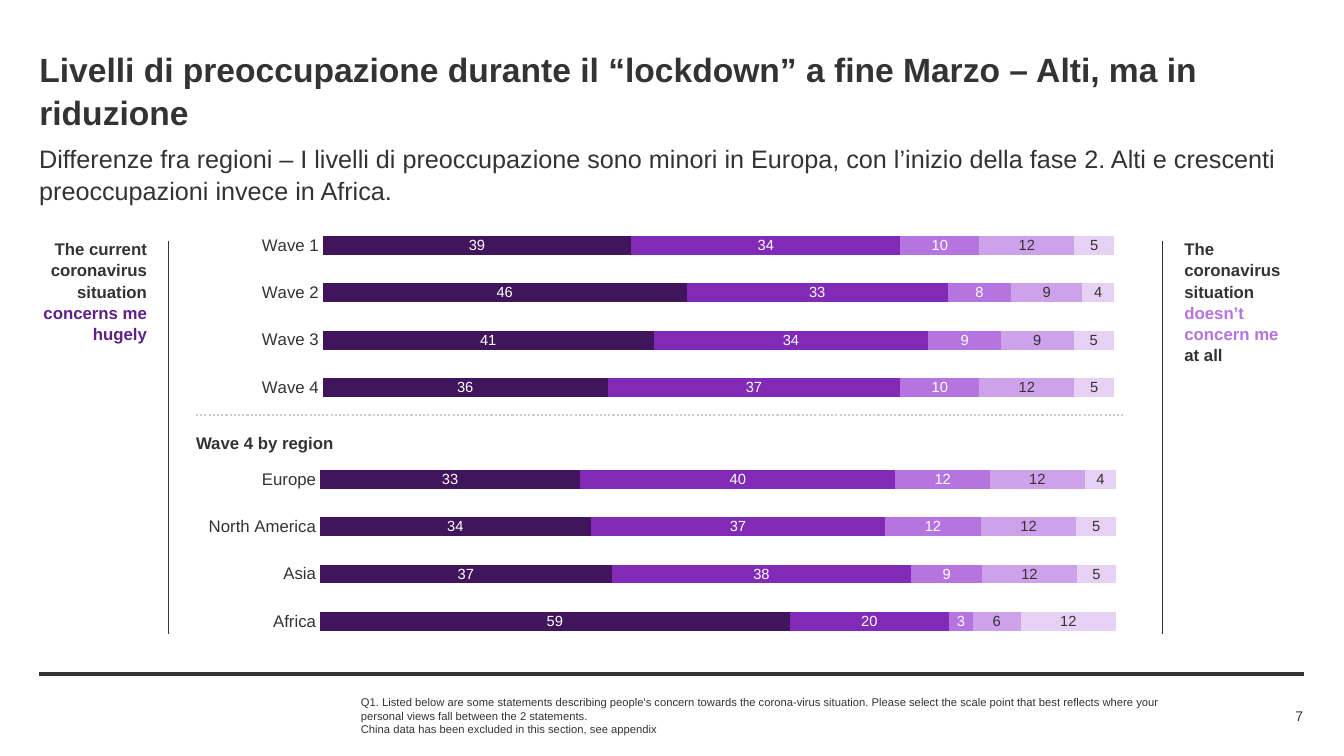
from lxml import etree
from pptx import Presentation
from pptx.chart.data import CategoryChartData
from pptx.dml.color import RGBColor
from pptx.enum import chart as ch, dml, shapes, text
from pptx.oxml import parse_xml
from pptx.oxml.ns import nsdecls, qn
from pptx.util import Pt

DARK = RGBColor(0x33, 0x33, 0x33)
WHITE = RGBColor(0xFF, 0xFF, 0xFF)
DOTTED = RGBColor(0xCE, 0xCE, 0xC5)
HUGELY = RGBColor(0x60, 0x20, 0x89)
LILAC = RGBColor(0xB5, 0x74, 0xDF)
# Bar fill and label colour for each scale point
SCALE = [
    (RGBColor(0x40, 0x15, 0x5C), WHITE),
    (RGBColor(0x80, 0x2A, 0xB7), WHITE),
    (LILAC, WHITE),
    (RGBColor(0xCE, 0xA2, 0xEA), DARK),
    (RGBColor(0xE6, 0xD1, 0xF4), DARK),
]
LEFT, RIGHT, CENTER = text.PP_ALIGN.LEFT, text.PP_ALIGN.RIGHT, text.PP_ALIGN.CENTER
TOP, MIDDLE = text.MSO_ANCHOR.TOP, text.MSO_ANCHOR.MIDDLE


def fill_text(sp, at, paragraphs, size, bold=False, align=LEFT, anchor=TOP,
              margin=0, spacing=1.05):
    """Place sp and write paragraphs, each a list of (text, colour) runs."""
    sp.left, sp.top, sp.width, sp.height = [Pt(v) for v in at]
    tf = sp.text_frame
    tf.word_wrap = True
    tf.auto_size = text.MSO_AUTO_SIZE.NONE
    tf.vertical_anchor = anchor
    tf.margin_left = tf.margin_right = Pt(margin)
    tf.margin_top = tf.margin_bottom = Pt(margin / 2)
    for i, runs in enumerate(paragraphs):
        p = tf.add_paragraph() if i else tf.paragraphs[0]
        p.alignment = align
        p.line_spacing = spacing
        p.space_before = Pt(0)
        for words, color in runs:
            if words == "\n":
                p.add_line_break()
                continue
            r = p.add_run()
            r.text = words
            r.font.name = "Arial"
            r.font.size = Pt(size)
            r.font.bold = bold
            r.font.color.rgb = color


prs = Presentation()
prs.slide_width, prs.slide_height = Pt(960), Pt(540)
s = prs.slides.add_slide(prs.slide_layouts[5])

fill_text(s.shapes.title, (28.1, 33.8, 903, 60),
          [[("Livelli di preoccupazione durante il “lockdown” a fine Marzo – Alti, "
             "ma in riduzione", DARK)]], 24, bold=True)

texts = [
    ((20.9, 97.9, 925, 51),
     [[("Differenze fra regioni – I livelli di preoccupazione sono minori in Europa, "
        "con l’inizio della fase 2. Alti e crescenti preoccupazioni invece in Africa.",
        DARK)]],
     dict(size=18, margin=7.2)),
    ((30.2, 170, 74.9, 73),
     [[("The current coronavirus situation ", DARK), ("concerns me hugely", HUGELY)]],
     dict(size=12, bold=True, align=RIGHT)),
    ((846, 170, 82, 87),
     [[("The coronavirus situation ", DARK), ("doesn’t concern me", LILAC),
       ("\n", DARK), ("at all", DARK)]],
     dict(size=12, bold=True)),
    ((140, 308.2, 228, 14.4), [[("Wave 4 by region", DARK)]], dict(size=12, bold=True)),
    ((257.8, 503.3, 590, 15.8),
     [[("Q1. Listed below are some statements describing people's concern towards the "
        "corona-virus situation. Please select the scale point that best reflects where "
        "your personal views fall between the 2 statements.", DARK)],
      [("China data has been excluded in this section, see appendix", DARK)]],
     dict(size=8, anchor=MIDDLE, spacing=1)),
    ((854.6, 503.3, 76.3, 15.8), [[("7", DARK)]],
     dict(size=10, align=RIGHT, anchor=MIDDLE, spacing=1)),
]
for at, paragraphs, style in texts:
    fill_text(s.shapes.add_textbox(0, 0, 0, 0), at, paragraphs, **style)

# Frame, horizontal plot layout (x, w as shares of the frame), categories, values
charts = [
    ((174.2, 155.5, 633.6, 141.1), (0.089, 0.892),
     ["Wave 1", "Wave 2", "Wave 3", "Wave 4"],
     [(39, 46, 41, 36), (34, 33, 34, 37), (10, 8, 9, 10), (12, 9, 9, 12), (5, 4, 5, 5)]),
    ((136.1, 322.6, 675.4, 141.1), (0.137, 0.842),
     ["Europe", "North America", "Asia", "Africa"],
     [(33, 34, 37, 59), (40, 37, 38, 20), (12, 12, 9, 3), (12, 12, 12, 6), (4, 5, 5, 12)]),
]
for at, (plot_x, plot_w), categories, values in charts:
    data = CategoryChartData(number_format="0")
    data.categories = categories
    for n, row in enumerate(values, 1):
        data.add_series(f"Series {n}", row)
    chart = s.shapes.add_chart(ch.XL_CHART_TYPE.BAR_STACKED_100,
                               *[Pt(v) for v in at], data).chart
    chart.has_legend = False
    chart.has_title = False
    chart.font.name = "Arial"
    chart.font.size = Pt(10)
    chart.font.color.rgb = DARK

    axis = chart.category_axis
    axis.reverse_order = True
    axis.major_tick_mark = ch.XL_TICK_MARK.NONE
    axis.format.line.fill.background()
    axis.tick_labels.font.name = "Arial"
    axis.tick_labels.font.size = Pt(12)
    axis.tick_labels.font.color.rgb = DARK
    chart.value_axis.visible = False
    chart.value_axis.has_major_gridlines = False

    plot = chart.plots[0]
    plot.gap_width, plot.overlap = 152, 100
    plot.vary_by_categories = False
    for series, (fill, label_color) in zip(plot.series, SCALE):
        series.format.fill.solid()
        series.format.fill.fore_color.rgb = fill
        labels = series.data_labels
        labels.show_value = True
        labels.position = ch.XL_LABEL_POSITION.CENTER
        labels.number_format, labels.number_format_is_linked = "0", False
        labels.font.name = "Arial"
        labels.font.size = Pt(10.5)
        labels.font.color.rgb = label_color

    plot_area = chart.element.find(".//" + qn("c:plotArea"))
    for layout in plot_area.findall(qn("c:layout")):
        plot_area.remove(layout)
    plot_area.insert(0, parse_xml(
        f'<c:layout {nsdecls("c")}><c:manualLayout><c:layoutTarget val="inner"/>'
        '<c:xMode val="edge"/><c:yMode val="edge"/>'
        f'<c:x val="{plot_x}"/><c:y val="0.02"/><c:w val="{plot_w}"/><c:h val="0.96"/>'
        '</c:manualLayout></c:layout>'))

rules = [
    ((28.1, 481.7, 931.7, 481.7), DARK, 3, None),
    ((120.2, 172, 120.2, 453), DARK, 1, None),
    ((830.2, 172, 830.2, 453), DARK, 1, None),
    ((140, 296.6, 802.8, 296.6), DOTTED, 1.5, dml.MSO_LINE.ROUND_DOT),
]
for ends, color, width, dash in rules:
    line = s.shapes.add_connector(shapes.MSO_CONNECTOR.STRAIGHT, *[Pt(v) for v in ends])
    line.line.color.rgb = color
    line.line.width = Pt(width)
    if dash:
        line.line.dash_style = dash
    etree.SubElement(line.element.spPr, qn("a:effectLst"))

prs.save("out.pptx")
